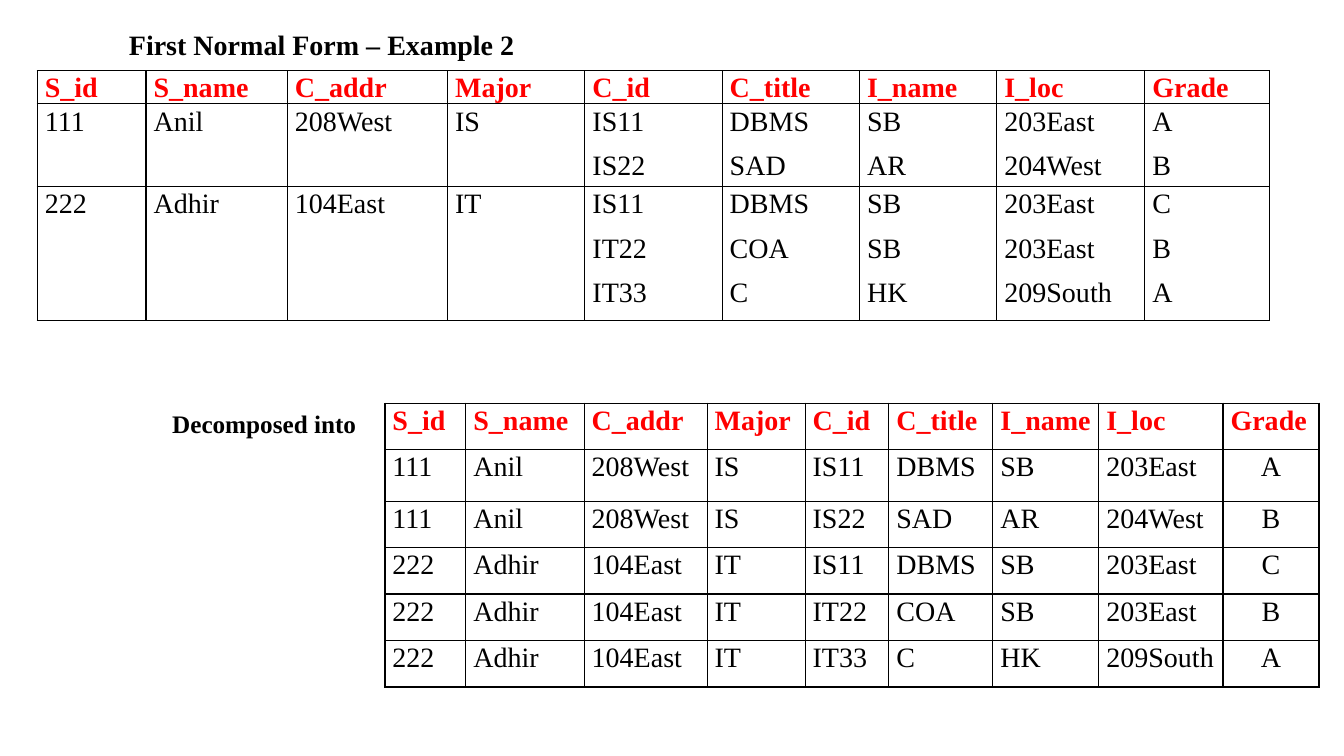
from dataclasses import dataclass

from lxml.etree import SubElement
from pptx import Presentation
from pptx.dml.color import RGBColor
from pptx.enum.text import MSO_AUTO_SIZE, PP_ALIGN
from pptx.oxml import parse_xml
from pptx.oxml.ns import nsdecls
from pptx.util import Cm, Pt


@dataclass(frozen=True)
class Theme:
    font: str = "Times New Roman"
    ink: str = "000000"
    heading: str = "FF0000"
    body_size: int = 20
    label_size: int = 18
    border_width: int = 1


theme = Theme()


def style_paragraph(paragraph, size, color, bold, align=PP_ALIGN.JUSTIFY):
    paragraph.font.name = theme.font
    paragraph.font.size = Pt(size)
    paragraph.font.bold = bold
    paragraph.font.color.rgb = RGBColor.from_string(color)
    paragraph.alignment = align
    paragraph.line_spacing = 1.07
    paragraph.space_after = Pt(8)


def add_relation(slide, left, top, widths, heights, records, grade_align):
    relation = slide.shapes.add_table(
        len(records), len(widths), Cm(left), Cm(top), Cm(sum(widths)), Cm(sum(heights))
    ).table
    relation.first_row = False
    relation.horz_banding = False
    for column, width in zip(relation.columns, widths):
        column.width = Cm(width)
    for row, height in zip(relation.rows, heights):
        row.height = Cm(height)
    for r, record in enumerate(records):
        for c, value in enumerate(record):
            cell = relation.cell(r, c)
            cell.text = value
            cell.margin_left = cell.margin_right = Cm(0.19)
            cell.margin_top = cell.margin_bottom = 0
            cell.fill.background()
            is_grade = r > 0 and c == len(widths) - 1
            for paragraph in cell.text_frame.paragraphs:
                style_paragraph(
                    paragraph,
                    theme.body_size,
                    theme.ink if r else theme.heading,
                    r == 0,
                    grade_align if is_grade else PP_ALIGN.JUSTIFY,
                )
            properties = cell._tc.get_or_add_tcPr()
            for position, side in enumerate(("lnL", "lnR", "lnT", "lnB")):
                border = parse_xml(
                    f'<a:{side} {nsdecls("a")} w="{Pt(theme.border_width)}">'
                    f'<a:solidFill><a:srgbClr val="{theme.ink}"/></a:solidFill></a:{side}>'
                )
                properties.insert(position, border)


attributes = (
    "S_id", "S_name", "C_addr", "Major", "C_id", "C_title", "I_name", "I_loc", "Grade",
)
students = [
    (("111", "Anil", "208West", "IS"), [
        ("IS11", "DBMS", "SB", "203East", "A"),
        ("IS22", "SAD", "AR", "204West", "B"),
    ]),
    (("222", "Adhir", "104East", "IT"), [
        ("IS11", "DBMS", "SB", "203East", "C"),
        ("IT22", "COA", "SB", "203East", "B"),
        ("IT33", "C", "HK", "209South", "A"),
    ]),
]
unnormalized = [attributes]
decomposed = [attributes]
for student, courses in students:
    unnormalized.append(student + tuple("\n".join(values) for values in zip(*courses)))
    decomposed.extend(student + course for course in courses)

presentation = Presentation()
presentation.slide_width = Cm(33.87)
presentation.slide_height = Cm(19.05)
slide = presentation.slides.add_slide(presentation.slide_layouts[6])

add_relation(
    slide, 0.94, 1.78,
    [2.74, 3.56, 4.04] + [3.46] * 4 + [3.73, 3.15],
    [0.71, 2.08, 3.38],
    unnormalized, PP_ALIGN.JUSTIFY,
)

title = slide.shapes.add_textbox(Cm(2.26), Cm(0.51), Cm(13.41), Cm(1.12)).text_frame
title.word_wrap = True
title.auto_size = MSO_AUTO_SIZE.SHAPE_TO_FIT_TEXT
title.text = "First Normal Form – Example 2"
style_paragraph(title.paragraphs[0], theme.body_size, theme.ink, True)
title_properties = title.paragraphs[0]._p.get_or_add_pPr()
title_properties.set("marL", "0")
title_properties.set("indent", str(Cm(0.74)))

add_relation(
    slide, 9.7, 10.16,
    [2.04, 2.98, 3.1, 2.47, 2.11, 2.62, 2.67, 3.13, 2.42],
    [1.17, 1.3] + [1.17] * 4,
    decomposed, PP_ALIGN.CENTER,
)

decomposition = slide.shapes.add_textbox(Cm(4.09), Cm(10.16), Cm(5.16), Cm(1.02)).text_frame
decomposition.word_wrap = False
decomposition.auto_size = MSO_AUTO_SIZE.SHAPE_TO_FIT_TEXT
decomposition.text = "Decomposed into"
label = decomposition.paragraphs[0]
style_paragraph(label, theme.label_size, theme.ink, True, PP_ALIGN.LEFT)
label.line_spacing = 1.0
label.space_after = Pt(0)

presentation.save("out.pptx")
